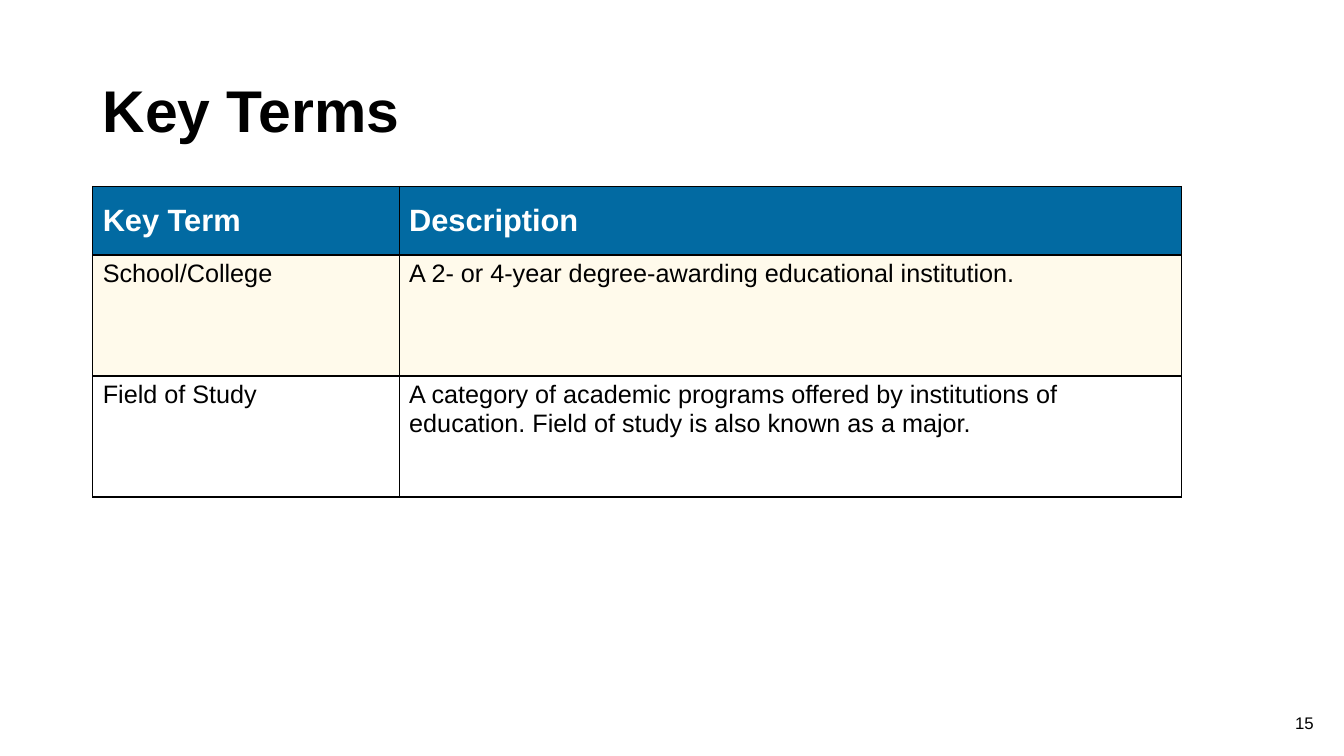
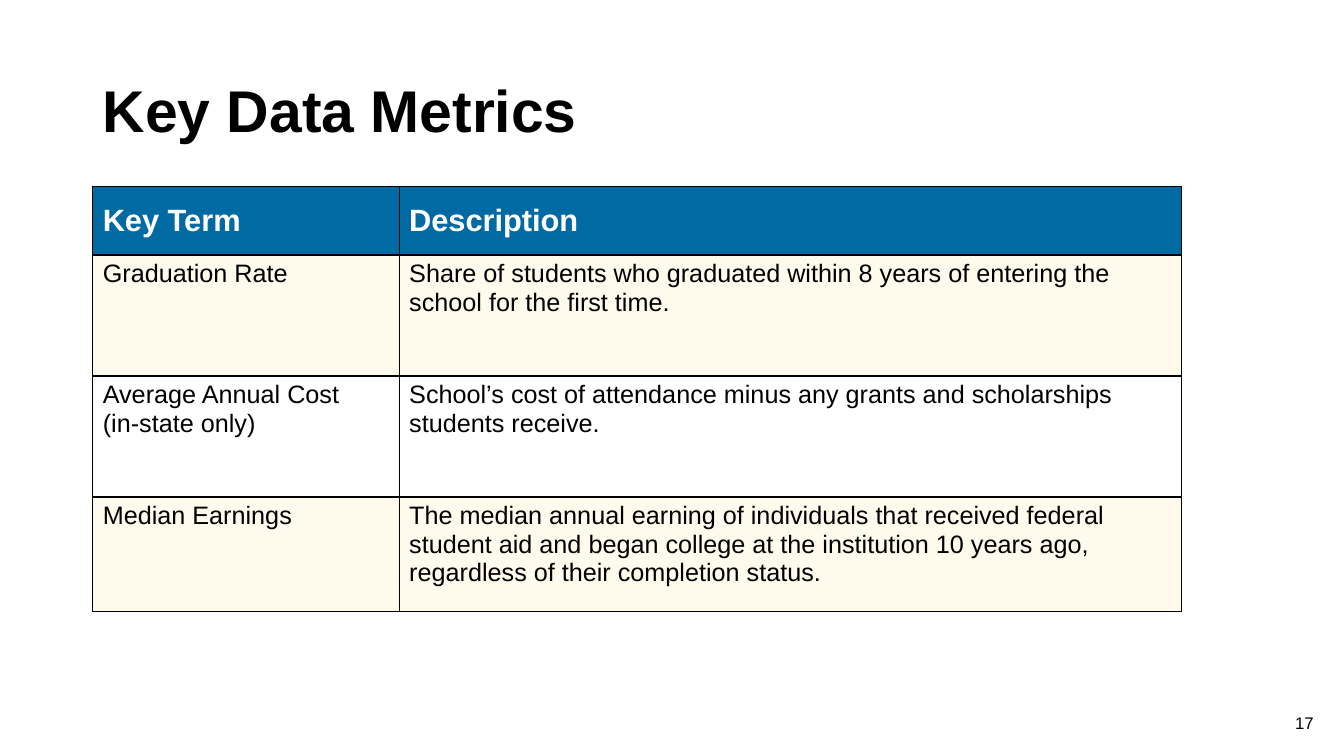
from lxml import etree
from pptx import Presentation, util as u
from pptx.dml.color import RGBColor
from pptx.enum import text
from pptx.oxml import ns

COLORS = {"ink": "000000", "paper": "FFFFFF", "header": "026AA2", "band": "FFFAEB"}
TITLE_ONLY = 5
LEFT, WIDTH = 6.9, 81
TABLE_TOP = 24.67
COLUMN_WIDTHS = [22.8, 58.2]
HEADER_HEIGHT = 9.07
HEADINGS = ("Key Term", "Description")


class GlossaryDeck:
    font_name = "Arial"
    grid = 100

    def __init__(self):
        self.deck = Presentation()
        self.deck.slide_width = u.Inches(13.33)
        self.deck.slide_height = u.Inches(7.5)
        self.page = None

    def across(self, columns):
        return round(self.deck.slide_width * columns / self.grid)

    def down(self, rows):
        return round(self.deck.slide_height * rows / self.grid)

    def area(self, left, top, width, height):
        return self.across(left), self.down(top), self.across(width), self.down(height)

    def color(self, name):
        return RGBColor.from_string(COLORS[name])

    def set_text(self, frame, words, size, color="ink", bold=False, align=text.PP_ALIGN.LEFT):
        frame.text = words
        frame.word_wrap = True
        for para in frame.paragraphs:
            para.alignment = align
            para.font.name = self.font_name
            para.font.size = u.Pt(size)
            para.font.bold = bold
            para.font.color.rgb = self.color(color)

    def add_page(self, title, number):
        self.page = self.deck.slides.add_slide(self.deck.slide_layouts[TITLE_ONLY])
        fill = self.page.background.fill
        fill.solid()
        fill.fore_color.rgb = self.color("paper")
        self.add_title(title)
        self.add_number(number)

    def add_title(self, words):
        box = self.page.shapes.title
        box.left, box.top, box.width, box.height = self.area(LEFT, 5.33, WIDTH, 19.33)
        frame = box.text_frame
        self.set_text(frame, words, 42, bold=True)
        frame.auto_size = text.MSO_AUTO_SIZE.NONE
        frame.vertical_anchor = text.MSO_ANCHOR.MIDDLE
        frame.paragraphs[0].line_spacing = 0.9

    def add_number(self, number):
        box = self.page.shapes.add_textbox(*self.area(77.5, 94.67, 22.5, 5.33))
        frame = box.text_frame
        self.set_text(frame, str(number), 12, align=text.PP_ALIGN.RIGHT)
        frame.vertical_anchor = text.MSO_ANCHOR.MIDDLE
        frame.margin_right = frame.margin_bottom = u.Inches(0.3)

    def add_border(self, cell, bottom_width):
        properties = cell._tc.get_or_add_tcPr()
        for index, side in enumerate("LRTB"):
            width = bottom_width if side == "B" else 1
            line = etree.Element(ns.qn(f"a:ln{side}"), w=str(u.Pt(width)))
            fill = etree.SubElement(line, ns.qn("a:solidFill"))
            etree.SubElement(fill, ns.qn("a:srgbClr"), val=COLORS["ink"])
            properties.insert(index, line)

    def add_table(self, entries, row_heights):
        rows = [HEADINGS, *entries]
        heights = [HEADER_HEIGHT, *row_heights]
        place = self.area(LEFT, TABLE_TOP, WIDTH, sum(heights))
        table = self.page.shapes.add_table(len(rows), len(HEADINGS), *place).table
        table.horz_banding = False
        for column, width in zip(table.columns, COLUMN_WIDTHS):
            column.width = self.across(width)
        for index, (row, height, words) in enumerate(zip(table.rows, heights, rows)):
            row.height = self.down(height)
            for cell, content in zip(row.cells, words):
                self.fill_cell(cell, content, index)

    def fill_cell(self, cell, words, row_index):
        header = row_index == 0
        if header:
            self.set_text(cell.text_frame, words, 22, "paper", bold=True)
            cell.vertical_anchor = text.MSO_ANCHOR.MIDDLE
        else:
            self.set_text(cell.text_frame, words, 18)
        cell.fill.solid()
        shade = "header" if header else "band" if row_index % 2 else "paper"
        cell.fill.fore_color.rgb = self.color(shade)
        self.add_border(cell, 2 if header else 1)

    def save(self):
        self.deck.save("out.pptx")


def main():
    glossary = GlossaryDeck()

    glossary.add_page("Key Terms", 15)
    glossary.add_table(
        [
            ("School/College", "A 2- or 4-year degree-awarding educational institution."),
            (
                "Field of Study",
                "A category of academic programs offered by institutions of education. "
                "Field of study is also known as a major.",
            ),
        ],
        [16, 16],
    )

    glossary.add_page("Key Data Metrics", 17)
    glossary.add_table(
        [
            (
                "Graduation Rate",
                "Share of students who graduated within 8 years of entering the school "
                "for the first time.",
            ),
            (
                "Average Annual Cost\n(in-state only)",
                "School’s cost of attendance minus any grants and scholarships students receive.",
            ),
            (
                "Median Earnings",
                "The median annual earning of individuals that received federal student aid "
                "and began college at the institution 10 years ago, regardless of their "
                "completion status.",
            ),
        ],
        [16, 16, 15.2],
    )

    glossary.save()


if __name__ == "__main__":
    main()
